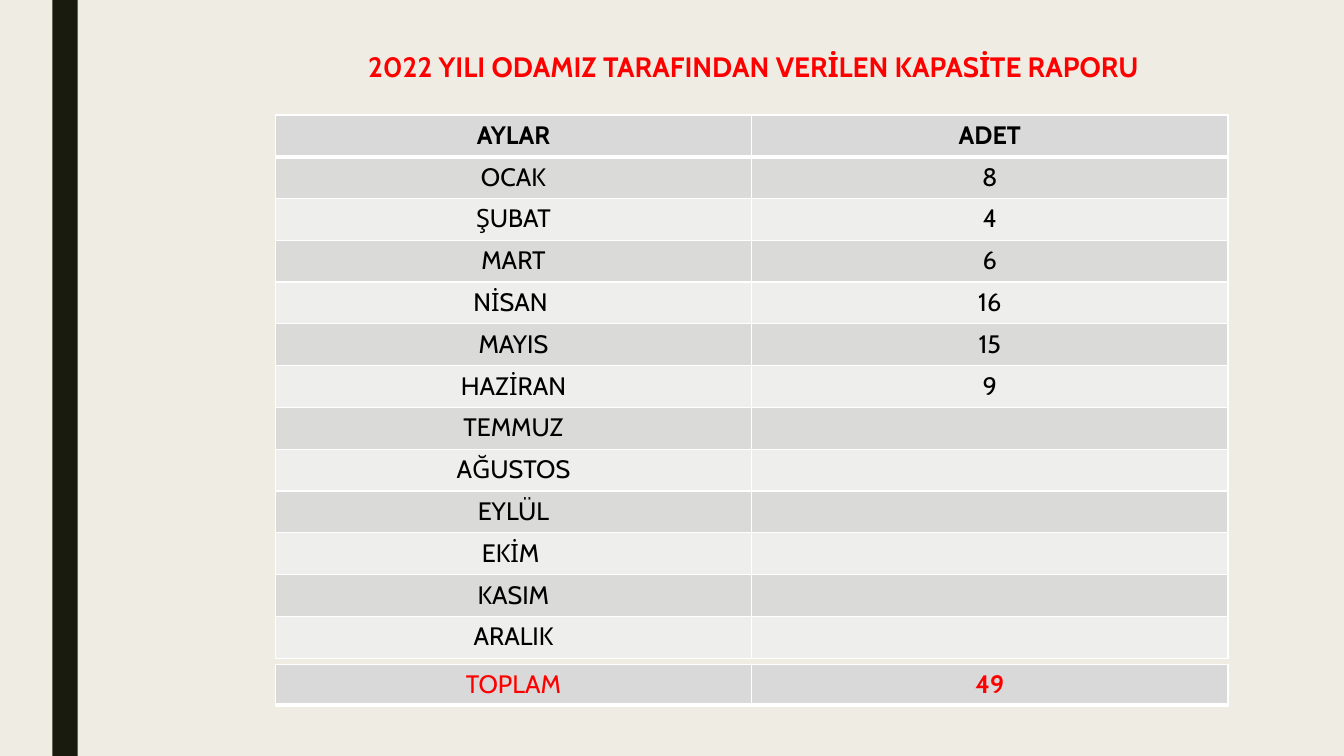
from dataclasses import dataclass

from lxml import etree
from pptx import Presentation
from pptx import util as u
from pptx.dml.color import RGBColor
from pptx.enum import shapes, text
from pptx.oxml.ns import qn

PX = 9144  # EMU per px, 100 px to the inch


@dataclass(frozen=True)
class Theme:
    font: str = "Cabin"
    background: str = "EFEDE3"
    bar: str = "191B0E"
    accent: str = "FF0000"
    ink: str = "000000"
    border: str = "FFFFFF"
    header: str = "D9D9D9"
    bands: tuple = ("DADBD9", "EEEEED")
    title_size: int = 20
    table_size: int = 18
    thin: int = 1
    thick: int = 3


THEME = Theme()
TITLE = "2022 YILI ODAMIZ TARAFINDAN VERİLEN KAPASİTE RAPORU "
MONTHS = [
    ("AYLAR", "ADET"),
    ("OCAK", "8"),
    ("ŞUBAT", "4"),
    ("MART", "6"),
    ("NİSAN ", "16"),
    ("MAYIS", "15"),
    ("HAZİRAN", "9"),
    ("TEMMUZ", ""),
    ("AĞUSTOS", ""),
    ("EYLÜL", ""),
    ("EKİM ", ""),
    ("KASIM", ""),
    ("ARALIK", ""),
]
TOTAL = [("TOPLAM", "49")]


def emu(box):
    return [u.Emu(v * PX) for v in box]


def rgb(color):
    return RGBColor.from_string(color)


def format_text(p, size, color, bold):
    p.alignment = text.PP_ALIGN.CENTER
    for r in p.runs:
        r.font.name = THEME.font
        r.font.size = u.Pt(size)
        r.font.bold = bold
        r.font.color.rgb = rgb(color)


def set_borders(cell, top, bottom):
    tc_pr = cell._tc.get_or_add_tcPr()
    widths = {"lnL": THEME.thin, "lnR": THEME.thin, "lnT": top, "lnB": bottom}
    for tag, width in widths.items():
        ln = etree.SubElement(tc_pr, qn(f"a:{tag}"), w=str(u.Pt(width)))
        fill = etree.SubElement(ln, qn("a:solidFill"))
        etree.SubElement(fill, qn("a:srgbClr"), val=THEME.border)


def add_bar(slide, box):
    sp = slide.shapes.add_shape(shapes.MSO_SHAPE.RECTANGLE, *emu(box))
    sp.shadow.inherit = False
    sp.fill.solid()
    sp.fill.fore_color.rgb = rgb(THEME.bar)
    sp.line.fill.background()


def add_title(slide, box):
    title = slide.shapes.title
    title.left, title.top, title.width, title.height = emu(box)
    tf = title.text_frame
    tf.text = TITLE
    tf.word_wrap = True
    tf.auto_size = text.MSO_AUTO_SIZE.NONE
    tf.vertical_anchor = text.MSO_ANCHOR.MIDDLE
    p = tf.paragraphs[0]
    p.line_spacing = 0.89
    format_text(p, THEME.title_size, THEME.accent, True)


def add_grid(slide, box, rows, color, is_bold):
    """Add a table with a heavy rule under its first row and banded rows below."""
    table = slide.shapes.add_table(len(rows), len(rows[0]), *emu(box)).table
    for i, values in enumerate(rows):
        fill = THEME.bands[(i - 1) % 2] if i else THEME.header
        top = THEME.thick if i == 1 else THEME.thin
        bottom = THEME.thick if i == 0 else THEME.thin
        for j, value in enumerate(values):
            cell = table.cell(i, j)
            cell.text_frame.text = value
            set_borders(cell, top, bottom)
            cell.fill.solid()
            cell.fill.fore_color.rgb = rgb(fill)
            p = cell.text_frame.paragraphs[0]
            format_text(p, THEME.table_size, color, is_bold(i, j))


def add_report_slide(prs):
    slide = prs.slides.add_slide(prs.slide_layouts[5])
    slide.background.fill.solid()
    slide.background.fill.fore_color.rgb = rgb(THEME.background)
    add_bar(slide, (52, 0, 25, 750))
    add_title(slide, (339, 47, 823, 42))
    left, width = 273, 945
    add_grid(slide, (left, 114, width, 539), MONTHS, THEME.ink,
             lambda row, col: row == 0)
    add_grid(slide, (left, 659, width, 40), TOTAL, THEME.accent,
             lambda row, col: col == 1)


def main():
    prs = Presentation()
    prs.slide_width, prs.slide_height = emu((1333, 750))
    add_report_slide(prs)
    prs.save("out.pptx")


if __name__ == "__main__":
    main()
